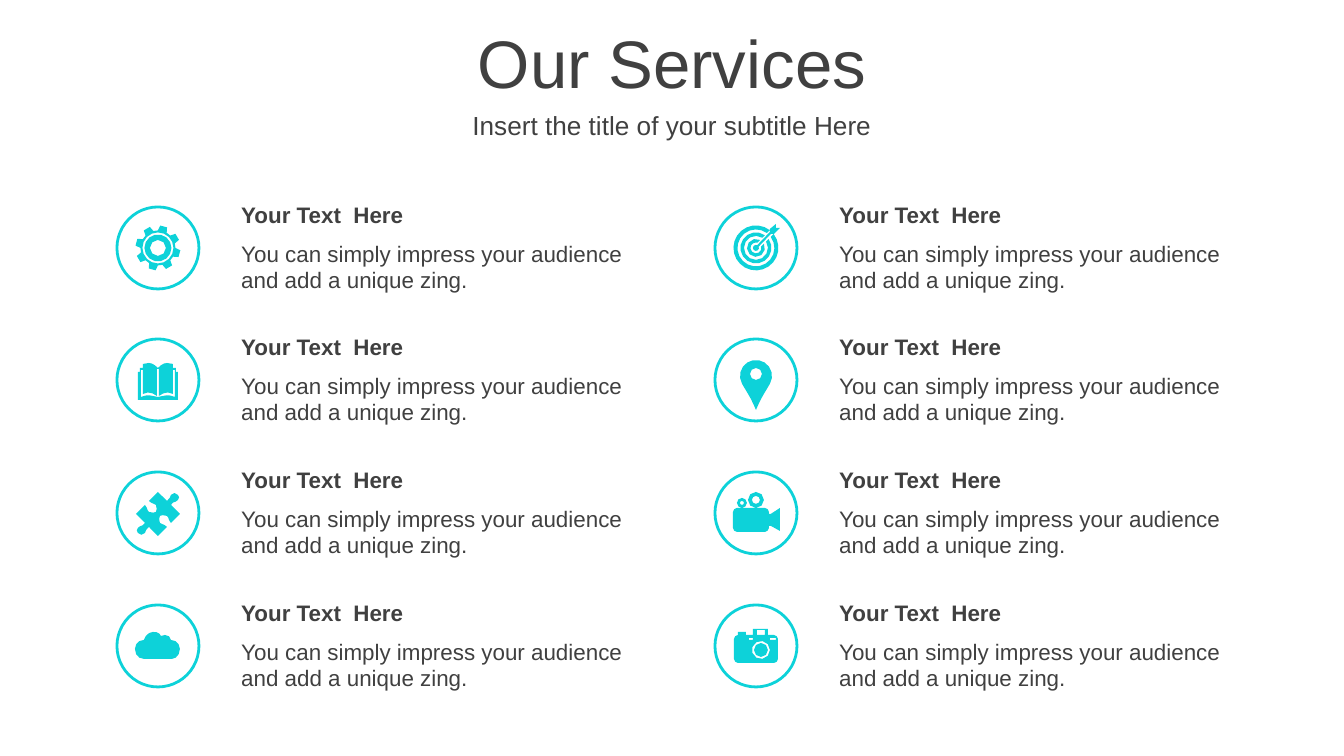
from math import asin, cos, degrees, dist, radians, sin

from pptx import Presentation
from pptx.dml.color import RGBColor
from pptx.enum.shapes import MSO_SHAPE
from pptx.enum.text import MSO_ANCHOR, MSO_AUTO_SIZE, PP_ALIGN
from pptx.util import Emu, Pt

OVAL = MSO_SHAPE.OVAL
MIDDLE = MSO_ANCHOR.MIDDLE
CENTER = PP_ALIGN.CENTER
FIXED, GROW = MSO_AUTO_SIZE.NONE, MSO_AUTO_SIZE.SHAPE_TO_FIT_TEXT

WHITE = RGBColor(0xFF, 0xFF, 0xFF)
TEAL = RGBColor(0x0D, 0xD2, 0xD9)
INK = RGBColor(0x40, 0x40, 0x40)
FONT = "Arial"

PX_PER_INCH = 134.4
HEADING = "Your Text  Here"
DETAIL = "You can simply impress your audience and add a unique zing."

# Service grid
LEFT, TOP = 117, 207
COLUMN_STEP, THREE_ROWS = 598, 398
BADGE = 82


def px(length):
    return Emu(round(length * 914400 / PX_PER_INCH))


# Outline helpers: points in px around the centre of a badge
def arc(x, y, radius, start=0, end=360):
    count = max(8, round(radius * (end - start) / 360))
    angles = [radians(start + (end - start) * i / count) for i in range(count + 1)]
    return [(x + radius * cos(a), y + radius * sin(a)) for a in angles]


def trace(*steps):
    """Two numbers are a straight step, six numbers a Bezier curve."""
    points = [steps[0]]
    for step in steps[1:]:
        if len(step) == 2:
            points.append(step)
            continue
        controls = [points[-1], step[:2], step[2:4], step[4:]]
        count = 2 + int(dist(controls[0], controls[3]) // 8)
        for i in range(1, count + 1):
            t = i / count
            weights = ((1 - t) ** 3, 3 * t * (1 - t) ** 2, 3 * t * t * (1 - t), t ** 3)
            points.append(tuple(sum(w * c[axis] for w, c in zip(weights, controls))
                                for axis in (0, 1)))
    return points


def rectangle(left, top, right, bottom):
    return [(left, top), (right, top), (right, bottom), (left, bottom)]


def mirrored(half):
    return half + [(-x, y) for x, y in reversed(half)]


# Icons: each is a list of closed outlines, inner ones are holes
def gear():
    teeth = []
    for middle in range(-75, 285, 45):
        for offset, radius in ((-15, 17.5), (-9, 22.5), (9, 22.5), (15, 17.5)):
            angle = radians(middle + offset)
            teeth.append((radius * cos(angle), radius * sin(angle)))
    return [teeth] + [arc(0, 0, radius) for radius in (15.5, 13.5, 8)]


def book():
    cover = trace((0, -12), (3, -15, 6, -17, 9, -17), (11, -17, 13, -16, 15, -16),
                  (15, -12), (18, -12), (18, -8), (20, -8), (20, 20))
    gap = trace((0, 17), (6, 16, 10, 14, 17, 17), (17, -10), (15, -10), (15, 14),
                (10, 11, 5, 13, 1, 16), (1, -11), (0, -11))
    return [mirrored(cover), mirrored(gap)]


def puzzle():
    half = trace((20, -19), (21, -18, 22, -15, 20, -14), (18, -11, 15, -13, 13, -9),
                 (22, 0), (13, 9), (10, 6, 11, 3, 9, 2), (6, 1, 3, 1, 2, 2),
                 (1, 3, 1, 7, 2, 9), (5, 11, 6, 10, 9, 13), (0, 22), (-9, 13),
                 (-13, 15, -11, 17, -13, 19), (-15, 22, -18, 21, -20, 19))
    return [[(x, y + 1) for x, y in half + [(-x, -y) for x, y in half]]]


def cloud():
    return [trace((-5, -14), (-1, -14, 2, -13, 3, -10), (5, -10, 6, -11, 7, -11),
                  (10, -11, 13, -9, 13, -6), (18, -6, 22, -2, 22, 3),
                  (22, 9, 18, 13, 14, 13), (-14, 13), (-19, 13, -23, 9, -23, 3),
                  (-23, -2, -19, -6, -14, -6), (-13, -10, -9, -14, -5, -14))]


def target():
    outlines = []
    for outer, inner in ((22.5, 18.5), (15.5, 12), (9, 5.5)):
        band = []
        for radius in (outer, inner):
            gap = degrees(asin(2.7 / radius))
            edge = arc(0, 0, radius, gap - 45, 315 - gap)
            band += edge if radius == outer else edge[::-1]
        outlines.append(band)
    arrow = [(14, -16), (14, -19), (20, -24), (20, -20), (24, -20), (18, -14), (15, -14)]
    return outlines + [arc(0, 0, 3, -25, 295) + arrow]


def pin():
    head = arc(0, -4, 16, 150, 390)
    side = trace(head[-1], (8, 14, 5, 18, 0, 30))[1:]
    return [head + side + [(-x, y) for x, y in side[-2::-1]], arc(0, -6, 6)]


def video():
    body = trace((-19, -5), (9, -5), (11, -5, 13, -3, 13, -1), (13, 1), (15, 1),
                 (24, -5), (24, 18), (15, 13), (13, 13), (13, 15),
                 (13, 17, 11, 19, 9, 19), (-19, 19), (-21, 19, -23, 17, -23, 15),
                 (-23, -1), (-23, -3, -21, -5, -19, -5))
    reels = ((-14, -10, 5), (-14, -10, 2), (0, -13, 8), (0, -13, 4))
    return [body] + [arc(*reel) for reel in reels]


def camera():
    body = trace((-18, -11), (-18, -14), (-10, -14), (-10, -11), (-3, -11), (-3, -17),
                 (12, -17), (12, -11), (18, -11), (20, -11, 22, -9, 22, -7), (22, 13),
                 (22, 15, 20, 17, 18, 17), (-18, 17), (-20, 17, -22, 15, -22, 13),
                 (-22, -7), (-22, -9, -20, -11, -18, -11))
    windows = [(1, -16, 9, -11), (-7, -8, -3, -6), (14, -8, 20, -6)]
    return [body, arc(5, 4, 9), arc(5, 4, 7)] + [rectangle(*w) for w in windows]


# Slide elements
def style_text(shape, text, size, bold=False):
    frame = shape.text_frame
    frame.text = text
    frame.word_wrap = True
    frame.vertical_anchor = MIDDLE
    for span in frame.paragraphs[0].runs:
        span.font.name = FONT
        span.font.size = Pt(size)
        span.font.bold = bold
        span.font.color.rgb = INK
    return frame


def place_heading(holder, text, top, height, size):
    holder.left, holder.top = px(0), px(top)
    holder.width, holder.height = px(1344), px(height)
    frame = style_text(holder, text, size)
    frame.auto_size = FIXED
    frame.paragraphs[0].alignment = CENTER
    return frame.paragraphs[0]


def add_badge(page, left, top):
    badge = page.shapes.add_shape(OVAL, px(left), px(top), px(BADGE), px(BADGE))
    badge.shadow.inherit = False
    badge.fill.solid()
    badge.fill.fore_color.rgb = WHITE
    badge.line.color.rgb = TEAL
    badge.line.width = Pt(1.5)


def add_icon(page, outlines, x, y):
    builder = None
    for outline in outlines:
        points = [(px(x + dx), px(y + dy)) for dx, dy in outline]
        if builder is None:
            builder = page.shapes.build_freeform(*points[0])
        else:
            builder.move_to(*points[0])
        builder.add_line_segments(points[1:], close=True)
    icon = builder.convert_to_shape()
    icon.shadow.inherit = False
    icon.fill.solid()
    icon.fill.fore_color.rgb = TEAL
    icon.line.fill.background()


def add_service_text(page, left, top):
    for text, offset, height, bold in ((DETAIL, 38, 67, False), (HEADING, 0, 40, True)):
        box = page.shapes.add_textbox(px(left), px(top + offset), px(417), px(height))
        style_text(box, text, 12, bold).auto_size = GROW


def main():
    deck = Presentation()
    deck.slide_width, deck.slide_height = px(1344), px(756)
    page = deck.slides.add_slide(deck.slide_layouts[0])

    # Title and subtitle
    title = place_heading(page.shapes.title, "Our Services", 19, 85, 36)
    title.space_before = Pt(4)
    place_heading(page.placeholders[1], "Insert the title of your subtitle Here", 104, 42, 14)

    # Two columns of four services
    columns = ((gear, book, puzzle, cloud), (target, pin, video, camera))
    for column, icons in enumerate(columns):
        for row, icon in enumerate(icons):
            left = LEFT + column * COLUMN_STEP
            top = TOP + row * THREE_ROWS // 3
            add_badge(page, left, top)
            add_icon(page, icon(), left + BADGE // 2, top + BADGE // 2)
            add_service_text(page, left + 111, top - 12)

    deck.save("out.pptx")


if __name__ == "__main__":
    main()
